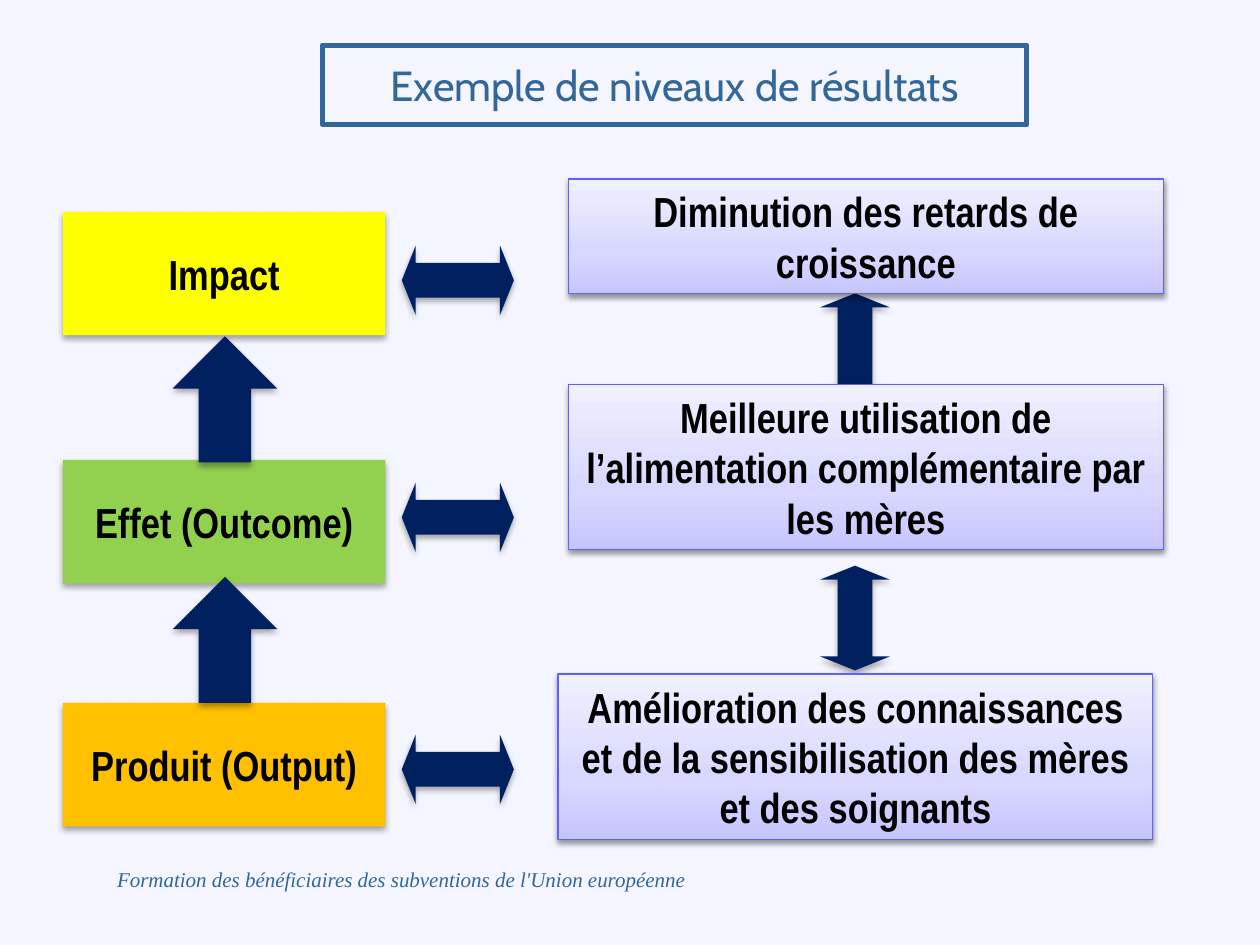
from copy import deepcopy

from lxml import etree
from pptx import Presentation
from pptx.dml.color import RGBColor
from pptx.enum.shapes import MSO_SHAPE as SHAPE
from pptx.enum.text import MSO_ANCHOR as ANCHOR, MSO_AUTO_SIZE as AUTO, PP_ALIGN as ALIGN
from pptx.oxml.ns import qn
from pptx.util import Cm, Pt

COLORS = {
    "background": "F4F5FE", "blue": "336699", "navy": "002060", "black": "000000",
    "impact": "FFFF00", "outcome": "92D050", "output": "FFC000", "border": "6060FD",
}
GRADIENT = [(0, "C6C6FF"), (0.35, "D7D7FF"), (1, "F0F0FF")]


def add_block(kind, box, color=None, shadow=(32, 3.5, 2.2)):
    """Add a borderless shape with a soft shadow: opacity %, blur pt, distance pt."""
    sp = s.shapes.add_shape(kind, *[Cm(v) for v in box])
    if color:
        sp.fill.solid()
        sp.fill.fore_color.rgb = RGBColor.from_string(COLORS[color])
    sp.line.fill.background()
    sp.shadow.inherit = False
    opacity, blur, dist = shadow
    effects = sp._element.spPr.find(qn("a:effectLst"))
    outer = etree.SubElement(effects, qn("a:outerShdw"), blurRad=str(Pt(blur)),
                             dist=str(Pt(dist)), dir="5400000", rotWithShape="0")
    clr = etree.SubElement(outer, qn("a:srgbClr"), val=COLORS["black"])
    etree.SubElement(clr, qn("a:alpha"), val=str(opacity * 1000))
    return sp


def set_text(sp, text, font, size, color, align=ALIGN.CENTER, wrap=True):
    tf = sp.text_frame
    tf.word_wrap = wrap
    tf.text = text
    p = tf.paragraphs[0]
    p.alignment = align
    p.font.name, p.font.size = font, Pt(size)
    p.font.color.rgb = RGBColor.from_string(COLORS[color])
    return p


prs = Presentation()
prs.slide_width, prs.slide_height = Cm(25.4), Cm(19.05)
s = prs.slides.add_slide(prs.slide_layouts[5])
s.background.fill.solid()
s.background.fill.fore_color.rgb = RGBColor.from_string(COLORS["background"])

# Title
title = s.shapes.title
title.left, title.top, title.width, title.height = Cm(6.5), Cm(0.91), Cm(14.2), Cm(1.6)
title.line.color.rgb = RGBColor.from_string(COLORS["blue"])
title.line.width = Pt(3)
set_text(title, "Exemple de niveaux de résultats", "Cabin", 24, "blue")
title.text_frame.vertical_anchor = ANCHOR.MIDDLE

# Footer
footer = s.shapes.add_textbox(Cm(2.11), Cm(17.35), Cm(20.6), Cm(1.32))
p = set_text(footer, "Formation des bénéficiaires des subventions de l'Union européenne",
             "Times New Roman", 12, "blue", ALIGN.LEFT)
p.font.italic = True

# Result levels, each with the arrow rising from it to the level above
levels = [
    ("Impact", 4.27, "impact", None, False),
    ("Effet (Outcome)", 9.27, "outcome", 6.78, False),
    ("Produit (Output)", 14.17, "output", 11.63, True),
]
for text, top, color, arrow_top, wrap in levels:
    sp = add_block(SHAPE.RECTANGLE, (1.27, top, 6.5, 2.49), color)
    set_text(sp, text, "Arial Narrow", 24, "black", wrap=wrap).font.bold = True
    sp.text_frame.vertical_anchor = ANCHOR.MIDDLE
    if arrow_top:
        add_block(SHAPE.UP_ARROW, (3.48, arrow_top, 2.11, 2.54), "navy")

# Double arrows: across to the examples, then upright between the examples
double_arrows = [(8.1, top, 2.26, 0) for top in (4.95, 9.73, 14.81)]
double_arrows += [(16.18, top, 2.11, 90) for top in (6.27, 11.76)]
for left, top, width, rotation in double_arrows:
    sp = add_block(SHAPE.LEFT_RIGHT_ARROW, (left, top, width, 1.4), "navy")
    sp.adjustments[1] = 0.2
    sp.rotation = rotation

# Examples
examples = [
    ("Diminution des retards de croissance", 11.46, 3.61, 2.31),
    ("Meilleure utilisation de l’alimentation complémentaire par les mères",
     11.46, 7.75, 3.33),
    ("Amélioration des connaissances et de la sensibilisation des mères et des soignants",
     11.25, 13.59, 3.33),
]
for text, left, top, height in examples:
    sp = add_block(SHAPE.RECTANGLE, (left, top, 11.99, height), shadow=(38, 3.1, 1.6))
    sp.fill.gradient()
    sp.fill.gradient_angle = 90
    stop_list = sp._element.spPr.find(qn("a:gradFill")).find(qn("a:gsLst"))
    stop_list.append(deepcopy(stop_list[0]))
    for stop, (position, color) in zip(sp.fill.gradient_stops, GRADIENT):
        stop.position = position
        stop.color.rgb = RGBColor.from_string(color)
    sp.line.color.rgb = RGBColor.from_string(COLORS["border"])
    sp.line.width = Pt(0.75)
    set_text(sp, text, "Arial Narrow", 24, "black").font.bold = True
    sp.text_frame.vertical_anchor = ANCHOR.MIDDLE
    sp.text_frame.auto_size = AUTO.SHAPE_TO_FIT_TEXT

prs.save("out.pptx")
